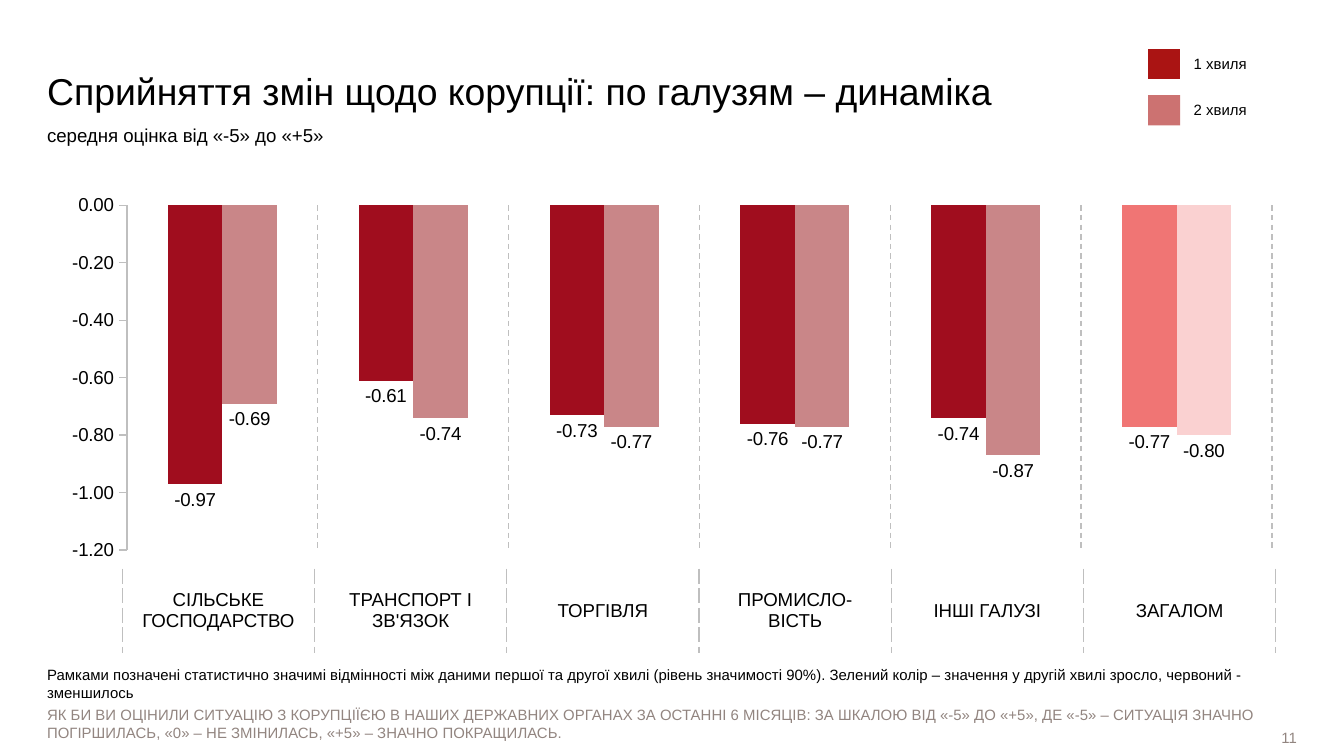
"""Build the slide on perceived changes in corruption by sector."""
from typing import NamedTuple, Optional

from lxml import etree
from pptx import Presentation
from pptx.chart import data as cd
from pptx.dml import color
from pptx.enum import chart as ch, dml, shapes, text
from pptx.oxml import ns, parse_xml
from pptx.util import Pt

FONT = "Arial"
LEFT, WIDTH = 25.2, 669
BLACK, GREY, LINE = "000000", "928580", "BFBFBF"
LEGEND_RED = "AA1413"
SIDES = ("lnL", "lnR", "lnT", "lnB")
TOP, MIDDLE, BOTTOM = (text.MSO_ANCHOR.TOP, text.MSO_ANCHOR.MIDDLE, text.MSO_ANCHOR.BOTTOM)


class Label(NamedTuple):
    words: str
    left: float
    top: float
    width: float
    height: float
    size: float
    color: str = BLACK
    anchor: text.MSO_ANCHOR = TOP
    align: text.PP_ALIGN = text.PP_ALIGN.LEFT
    bottom: float = 0
    before: float = 0


class Wave(NamedTuple):
    name: str
    values: tuple
    color: str
    total_color: str
    alpha: int
    frames: dict


LABELS = (
    Label("11", 592.6, 389.5, 102.2, 11.5, 8, GREY, MIDDLE, text.PP_ALIGN.RIGHT),
    Label("Сприйняття змін щодо корупції: по галузям – динаміка",
          LEFT, 15.1, WIDTH, 45.4, 20, anchor=BOTTOM),
    Label("середня оцінка від «-5» до «+5»", LEFT, 66.2, WIDTH, 17.3, 10, before=3),
    Label("Рамками позначені статистично значимі відмінності між даними першої та другої хвилі "
          "(рівень значимості 90%). Зелений колір – значення у другій хвилі зросло, "
          "червоний - зменшилось", LEFT, 367.2, WIDTH, 11.5, 8, anchor=BOTTOM, bottom=2.9),
    Label("ЯК БИ ВИ ОЦІНИЛИ СИТУАЦІЮ З КОРУПЦІЇЄЮ В НАШИХ ДЕРЖАВНИХ ОРГАНАХ ЗА ОСТАННІ "
          "6 МІСЯЦІВ: ЗА ШКАЛОЮ ВІД «-5» ДО «+5», ДЕ «-5» – СИТУАЦІЯ ЗНАЧНО ПОГІРШИЛАСЬ, "
          "«0» – НЕ ЗМІНИЛАСЬ, «+5» – ЗНАЧНО ПОКРАЩИЛАСЬ.",
          LEFT, 378, WIDTH, 11.5, 8, GREY, bottom=2.9),
)
SECTORS = ("СІЛЬСЬКЕ ГОСПОДАРСТВО", "ТРАНСПОРТ І ЗВ'ЯЗОК", "ТОРГІВЛЯ",
           "ПРОМИСЛО-\nВІСТЬ", "ІНШІ ГАЛУЗІ", "ЗАГАЛОМ")
WAVES = (
    Wave("1 хвиля", (-0.97, -0.61, -0.73, -0.76, -0.74, -0.77), "A00D1E", "F07574", 100, {}),
    Wave("2 хвиля", (-0.69, -0.74, -0.77, -0.77, -0.87, -0.8), "C98688", "FAD1D1", 60,
         {0: "00B050", 4: "FF0000"}),
)


def rgb(value: str) -> color.RGBColor:
    """Turn a hex string into a colour."""
    return color.RGBColor.from_string(value)


def paint(fill, value: str) -> None:
    """Apply a solid fill."""
    fill.solid()
    fill.fore_color.rgb = rgb(value)


def set_font(font, size: float, value: str = BLACK) -> None:
    """Set face, size and colour."""
    font.name, font.size = FONT, Pt(size)
    font.color.rgb = rgb(value)


def add_label(slide, label: Label) -> None:
    """Add a wrapped text box."""
    sp = slide.shapes.add_textbox(*map(Pt, label[1:5]))
    tf = sp.text_frame
    tf.word_wrap = True
    tf.vertical_anchor = label.anchor
    tf.margin_left = tf.margin_right = tf.margin_top = 0
    tf.margin_bottom = Pt(label.bottom)
    p = tf.paragraphs[0]
    p.text, p.alignment, p.space_before = label.words, label.align, Pt(label.before)
    set_font(p.font, label.size, label.color)


def set_borders(cell, sides: tuple = ()) -> None:
    """Draw dashed borders on the given sides and clear the others."""
    for i, side in enumerate(SIDES):
        inner = (f'<a:solidFill><a:srgbClr val="{LINE}"/></a:solidFill><a:prstDash val="dash"/>'
                 if side in sides else "<a:noFill/>")
        ln = parse_xml(f'<a:{side} {ns.nsdecls("a")} w="{Pt(0.75)}">{inner}</a:{side}>')
        cell._tc.get_or_add_tcPr().insert(i, ln)


def add_table(slide, left: float, top: float, widths: list, heights: list):
    """Add a plain table without fills or borders."""
    table = slide.shapes.add_table(len(heights), len(widths), Pt(left), Pt(top),
                                   Pt(sum(widths)), Pt(sum(heights))).table
    table.first_row = table.horz_banding = False
    for column, width in zip(table.columns, widths):
        column.width = Pt(width)
    for row, height in zip(table.rows, heights):
        row.height = Pt(height)
    for cell in table.iter_cells():
        cell.fill.background()
        cell.vertical_anchor = MIDDLE
    return table


def fill_cell(cell, words: str, size: float, align: text.PP_ALIGN) -> None:
    """Write text into a table cell."""
    cell.text = words
    for p in cell.text_frame.paragraphs:
        p.alignment = align
        set_font(p.font, size)


def add_sectors(slide) -> None:
    """Add the row of sector names."""
    table = add_table(slide, 65.5, 304.6, [103] * len(SECTORS), [45.4])
    for cell, words in zip(table.iter_cells(), SECTORS):
        fill_cell(cell, words, 10, text.PP_ALIGN.CENTER)
        set_borders(cell, ("lnL", "lnR"))


def add_legend(slide) -> None:
    """Add the colour key for the two waves."""
    table = add_table(slide, 615, 26.4, [17, 48.6], [16.2, 8.4, 16.2])
    for cell in table.iter_cells():
        cell.margin_top = cell.margin_bottom = 0
        cell.text_frame.paragraphs[0].font.size = Pt(1)
        set_borders(cell)
    for row, wave in zip((0, 2), WAVES):
        swatch = table.cell(row, 0)
        paint(swatch.fill, LEGEND_RED)
        clr = swatch._tc.tcPr.find(ns.qn("a:solidFill"))[0]
        etree.SubElement(clr, ns.qn("a:alpha"), val=str(wave.alpha * 1000))
        fill_cell(table.cell(row, 1), wave.name, 8, text.PP_ALIGN.LEFT)


def style_series(series, wave: Wave) -> None:
    """Colour one wave, show its values and frame significant ones."""
    paint(series.format.fill, wave.color)
    series.invert_if_negative = False
    paint(series.points[len(SECTORS) - 1].format.fill, wave.total_color)
    labels = series.data_labels
    labels.show_value = True
    labels.number_format, labels.number_format_is_linked = "0.00", False
    labels.position = ch.XL_LABEL_POSITION.OUTSIDE_END
    set_font(labels.font, 10)
    for i, frame in wave.frames.items():
        series.points[i].data_label.position = ch.XL_LABEL_POSITION.OUTSIDE_END
        idx = series._element.xpath(f"c:dLbls/c:dLbl/c:idx[@val='{i}']")[0]
        idx.addnext(parse_xml(
            f'<c:spPr {ns.nsdecls("c", "a")}><a:ln w="{Pt(2)}"><a:solidFill>'
            f'<a:srgbClr val="{frame}"/></a:solidFill></a:ln></c:spPr>'))
        idx.addnext(parse_xml(
            f'<c:numFmt {ns.nsdecls("c")} formatCode="0.00" sourceLinked="0"/>'))


def add_chart(slide) -> None:
    """Add the column chart of both waves."""
    data = cd.CategoryChartData(number_format="0.00")
    data.categories = [str(i + 1) for i in range(len(SECTORS))]
    for wave in WAVES:
        data.add_series(wave.name, wave.values)
    chart = slide.shapes.add_chart(ch.XL_CHART_TYPE.COLUMN_CLUSTERED, Pt(LEFT), Pt(100.8),
                                   Pt(WIDTH), Pt(203.8), data).chart
    chart.has_legend = chart.has_title = False
    set_font(chart.font, 10)
    plot = chart.plots[0]
    plot.gap_width, plot.overlap, plot.vary_by_categories = 150, 0, False
    for series, wave in zip(plot.series, WAVES):
        style_series(series, wave)
    cat, val = chart.category_axis, chart.value_axis
    cat.visible, cat.has_major_gridlines = False, True
    val.has_major_gridlines = False
    val.minimum_scale, val.maximum_scale, val.major_unit = -1.2, 0, 0.2
    val.major_tick_mark = ch.XL_TICK_MARK.OUTSIDE
    val.tick_labels.number_format, val.tick_labels.number_format_is_linked = "0.00", False
    for line in (cat.major_gridlines.format.line, val.format.line):
        line.color.rgb, line.width = rgb(LINE), Pt(0.75)
    cat.major_gridlines.format.line.dash_style = dml.MSO_LINE.DASH
    area = chart._chartSpace.xpath("c:chart/c:plotArea")[0]
    for old in area.findall(ns.qn("c:layout")):
        area.remove(old)
    box = "".join(f'<c:{k} val="{v}"/>' for k, v in (
        ("layoutTarget", "inner"), ("xMode", "edge"), ("yMode", "edge"),
        ("x", 0.064), ("y", 0.045), ("w", 0.917), ("h", 0.907)))
    area.insert(0, parse_xml(f'<c:layout {ns.nsdecls("c")}><c:manualLayout>{box}'
                             '</c:manualLayout></c:layout>'))


def main() -> None:
    """Assemble and save the slide."""
    prs = Presentation()
    prs.slide_width, prs.slide_height = Pt(720), Pt(405)
    slide = prs.slides.add_slide(prs.slide_layouts[6])
    add_chart(slide)
    add_sectors(slide)
    add_legend(slide)
    for label in LABELS:
        add_label(slide, label)
    prs.save("out.pptx")


if __name__ == "__main__":
    main()
